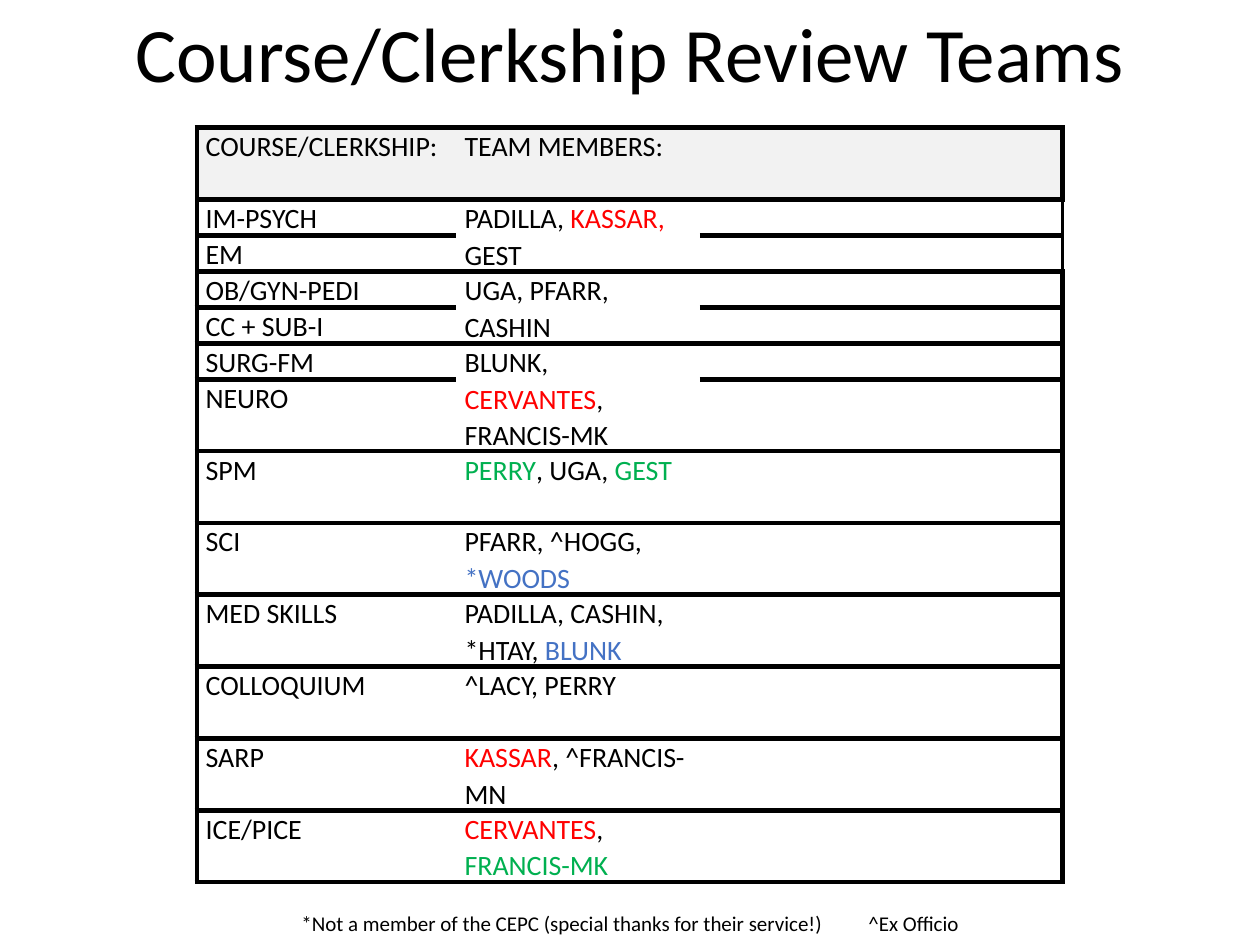
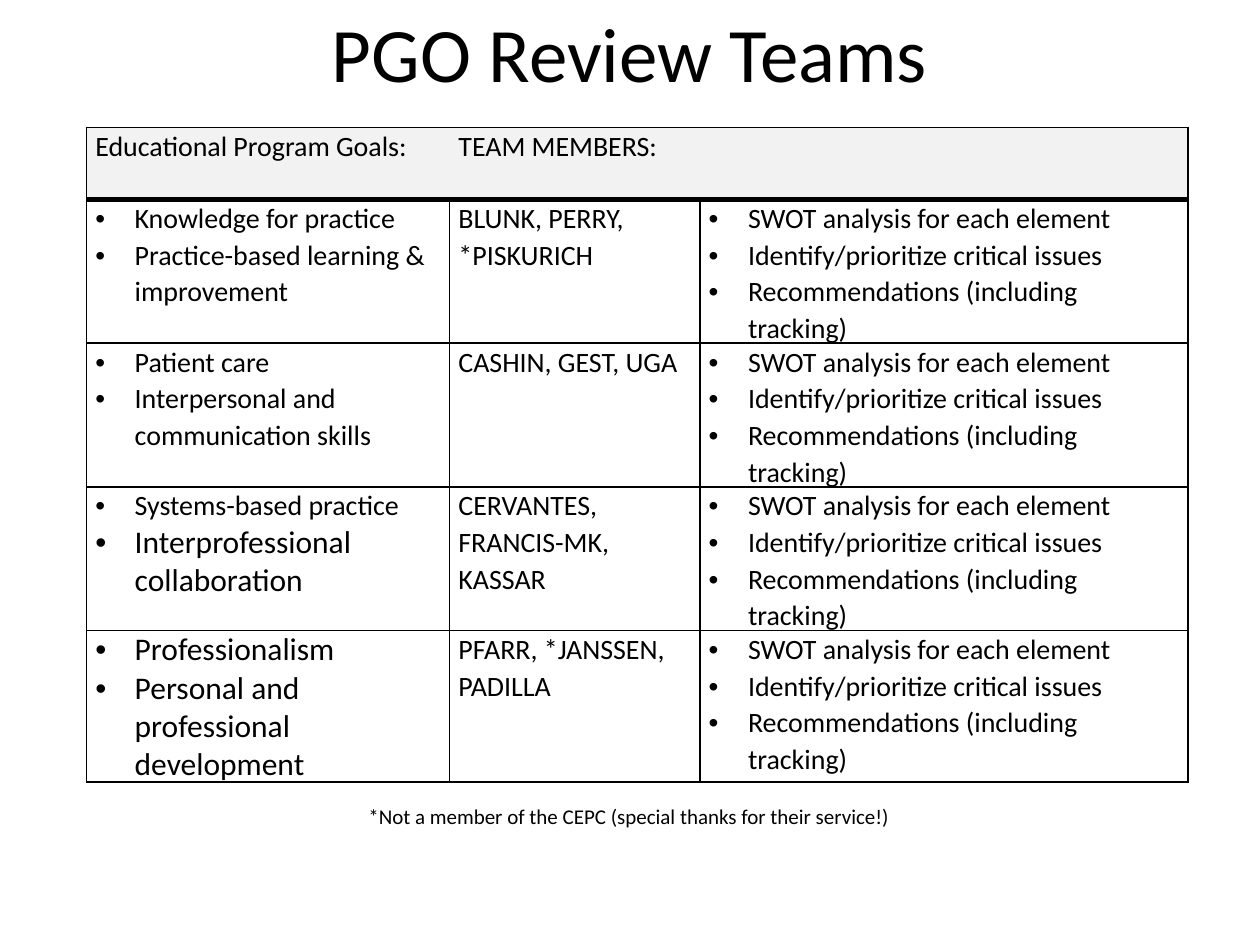
"""Builds two slides listing the review teams and their members."""
from dataclasses import dataclass

from lxml.etree import SubElement
from pptx import Presentation
from pptx.dml.color import RGBColor
from pptx.enum.text import MSO_ANCHOR, PP_ALIGN
from pptx.oxml.ns import qn
from pptx.slide import Slide
from pptx.table import Table, _Cell
from pptx.text.text import TextFrame
from pptx.util import Pt

FONT = "Calibri"
COLORS = {
    "black": "000000",
    "white": "FFFFFF",
    "header": "F2F2F2",
    "red": "FF0000",
    "green": "00B050",
    "blue": "4472C4",
}
PLAIN_TABLE_STYLE = "{2D5ABB26-0587-4C30-8999-92F81FD0307C}"
TABLE_TOP = 73
ROW_HEIGHT = 41
THICK, MEDIUM, THIN = 3, 2.25, 1
BODY_SPACING = 1.07
FOOTNOTE = "*Not a member of the CEPC (special thanks for their service!)"


@dataclass(frozen=True)
class Span:
    text: str
    color: str = "black"
    size: float = 16


@dataclass(frozen=True)
class Para:
    spans: tuple[Span, ...]
    bullet: bool = False
    spacing: float = BODY_SPACING
    align: PP_ALIGN = PP_ALIGN.LEFT


@dataclass(frozen=True)
class Box:
    left: float
    top: float
    width: float
    height: float


@dataclass(frozen=True)
class Course:
    names: tuple[str, ...]
    members: tuple[Span, ...]
    side_border: float = THICK


@dataclass(frozen=True)
class Goal:
    goals: tuple[Para, ...]
    members: str


def line(text: str) -> Para:
    return Para((Span(text),))


def bullet(text: str) -> Para:
    return Para((Span(text),), bullet=True)


def large_bullet(text: str) -> Para:
    return Para((Span(text, size=18),), bullet=True, spacing=1)


COURSES = (
    Course(("IM-PSYCH", "EM"),
           (Span("PADILLA, "), Span("KASSAR, ", "red"), Span("GEST")), MEDIUM),
    Course(("OB/GYN-PEDI", "CC + SUB-I"), (Span("UGA, PFARR, CASHIN"),)),
    Course(("SURG-FM", "NEURO"),
           (Span("BLUNK, "), Span("CERVANTES", "red"), Span(", FRANCIS-MK"))),
    Course(("SPM",), (Span("PERRY", "green"), Span(", UGA, "), Span("GEST", "green"))),
    Course(("SCI",), (Span("PFARR, ^HOGG, "), Span("*WOODS", "blue"))),
    Course(("MED SKILLS",), (Span("PADILLA, CASHIN, *HTAY, "), Span("BLUNK", "blue"))),
    Course(("COLLOQUIUM",), (Span("^LACY, PERRY"),)),
    Course(("SARP",), (Span("KASSAR", "red"), Span(", ^FRANCIS-MN"))),
    Course(("ICE/PICE",),
           (Span("CERVANTES", "red"), Span(", "), Span("FRANCIS-MK", "green"))),
)
GOALS = (
    Goal((bullet("Knowledge for practice"),
          bullet("Practice-based learning & improvement")), "BLUNK, PERRY, *PISKURICH"),
    Goal((bullet("Patient care"),
          bullet("Interpersonal and communication skills")), "CASHIN, GEST, UGA"),
    Goal((bullet("Systems-based practice"),
          large_bullet("Interprofessional collaboration")), "CERVANTES, FRANCIS-MK, KASSAR"),
    Goal((large_bullet("Professionalism"),
          large_bullet("Personal and professional development")), "PFARR, *JANSSEN, PADILLA"),
)
TASKS = (
    bullet("SWOT analysis for each element"),
    bullet("Identify/prioritize critical issues"),
    bullet("Recommendations (including tracking)"),
)


def write_paras(frame: TextFrame, paras: tuple[Para, ...]) -> None:
    for index, para in enumerate(paras):
        paragraph = frame.add_paragraph() if index else frame.paragraphs[0]
        paragraph.alignment = para.align
        paragraph.line_spacing = para.spacing
        for span in para.spans:
            run = paragraph.add_run()
            run.text = span.text
            run.font.name = FONT
            run.font.size = Pt(span.size)
            run.font.color.rgb = RGBColor.from_string(COLORS[span.color])
        if para.bullet:
            properties = paragraph._p.get_or_add_pPr()
            properties.set("marL", str(Pt(22.5)))
            properties.set("indent", str(Pt(-22.5)))
            SubElement(properties, qn("a:buFont"), typeface="Arial")
            SubElement(properties, qn("a:buChar"), char="•")


def add_text(slide: Slide, box: Box, spans: tuple[Span, ...],
             spacing: float = BODY_SPACING, anchor: MSO_ANCHOR = MSO_ANCHOR.TOP) -> None:
    shape = slide.shapes.add_textbox(Pt(box.left), Pt(box.top), Pt(box.width), Pt(box.height))
    frame = shape.text_frame
    frame.word_wrap = True
    frame.vertical_anchor = anchor
    write_paras(frame, (Para(spans, spacing=spacing, align=PP_ALIGN.CENTER),))


def add_page(deck: Presentation, title: str) -> Slide:
    page = deck.slides.add_slide(deck.slide_layouts[6])
    page.background.fill.solid()
    page.background.fill.fore_color.rgb = RGBColor.from_string(COLORS["white"])
    add_text(page, Box(49.5, 0, 621, 66), (Span(title, size=44),), 0.9, MSO_ANCHOR.MIDDLE)
    return page


def add_table(slide: Slide, left: float, widths: tuple[float, ...],
              heights: list[float]) -> Table:
    frame = slide.shapes.add_table(len(heights), len(widths), Pt(left), Pt(TABLE_TOP),
                                   Pt(sum(widths)), Pt(sum(heights)))
    table = frame.table
    table.first_row = table.horz_banding = False
    table._tbl.tblPr.find(qn("a:tableStyleId")).text = PLAIN_TABLE_STYLE
    for column, width in zip(table.columns, widths):
        column.width = Pt(width)
    for row, height in zip(table.rows, heights):
        row.height = Pt(height)
    return table


def fill_cell(cell: _Cell, paras: tuple[Para, ...], borders: dict[str, float],
              header: bool = False) -> None:
    cell.margin_left = cell.margin_right = Pt(5)
    cell.margin_top = cell.margin_bottom = 0
    write_paras(cell.text_frame, paras)
    if not paras:
        SubElement(cell.text_frame.paragraphs[0]._p, qn("a:endParaRPr"), sz="1600")
    properties = cell._tc.get_or_add_tcPr()
    for side in "LRTB":
        if borders.get(side):
            edge = SubElement(properties, qn(f"a:ln{side}"), w=str(Pt(borders[side])))
            fill = SubElement(edge, qn("a:solidFill"))
            SubElement(fill, qn("a:srgbClr"), val=COLORS["black"])
    if header:
        cell.fill.solid()
        cell.fill.fore_color.rgb = RGBColor.from_string(COLORS["header"])
    else:
        cell.fill.background()


def fill_row(table: Table, row: int, contents: tuple[tuple[Para, ...], ...], top: float,
             bottom: float, side: float, inner: float = 0, header: bool = False) -> None:
    last = len(contents) - 1
    for column, paras in enumerate(contents):
        borders = {"L": inner if column else side, "R": inner if column < last else side,
                   "T": top, "B": bottom}
        fill_cell(table.cell(row, column), paras, borders, header)


def add_course_page(deck: Presentation) -> None:
    page = add_page(deck, "Course/Clerkship Review Teams")
    heights = [ROW_HEIGHT]
    for course in COURSES:
        heights += [ROW_HEIGHT / len(course.names)] * len(course.names)
    table = add_table(page, 112.5, (148, 139.5, 207), heights)
    fill_row(table, 0, ((line("COURSE/CLERKSHIP:"),), (line("TEAM MEMBERS:"),), ()),
             THICK, THICK, THICK, header=True)
    row = 1
    for course in COURSES:
        final = len(course.names) - 1
        for index, name in enumerate(course.names):
            members = () if index else (Para(course.members),)
            fill_row(table, row + index, ((line(name),), members, ()),
                     0 if index else THICK, THICK if index == final else 0, course.side_border)
        if final:
            table.cell(row, 1).merge(table.cell(row + final, 1))
        row += len(course.names)
    add_text(page, Box(56, 507, 608, 33),
             (Span(FOOTNOTE, size=12), Span("\t", "red", 20), Span("^Ex Officio", size=12)))


def add_goal_page(deck: Presentation) -> None:
    page = add_page(deck, "PGO Review Teams")
    heights = [ROW_HEIGHT] + [2 * ROW_HEIGHT] * len(GOALS)
    table = add_table(page, 49.5, (207.5, 143, 279), heights)
    fill_row(table, 0, ((line("Educational Program Goals:"),), (line("TEAM MEMBERS:"),), ()),
             THIN, THICK, THIN, header=True)
    for row, goal in enumerate(GOALS, start=1):
        fill_row(table, row, (goal.goals, (line(goal.members),), TASKS),
                 THICK if row == 1 else THIN, THIN, THIN, THIN)
    add_text(page, Box(113, 454.5, 493, 23), (Span(FOOTNOTE, size=12),))


def main() -> None:
    deck = Presentation()
    deck.slide_width, deck.slide_height = Pt(720), Pt(540)
    add_course_page(deck)
    add_goal_page(deck)
    deck.save("out.pptx")


if __name__ == "__main__":
    main()
